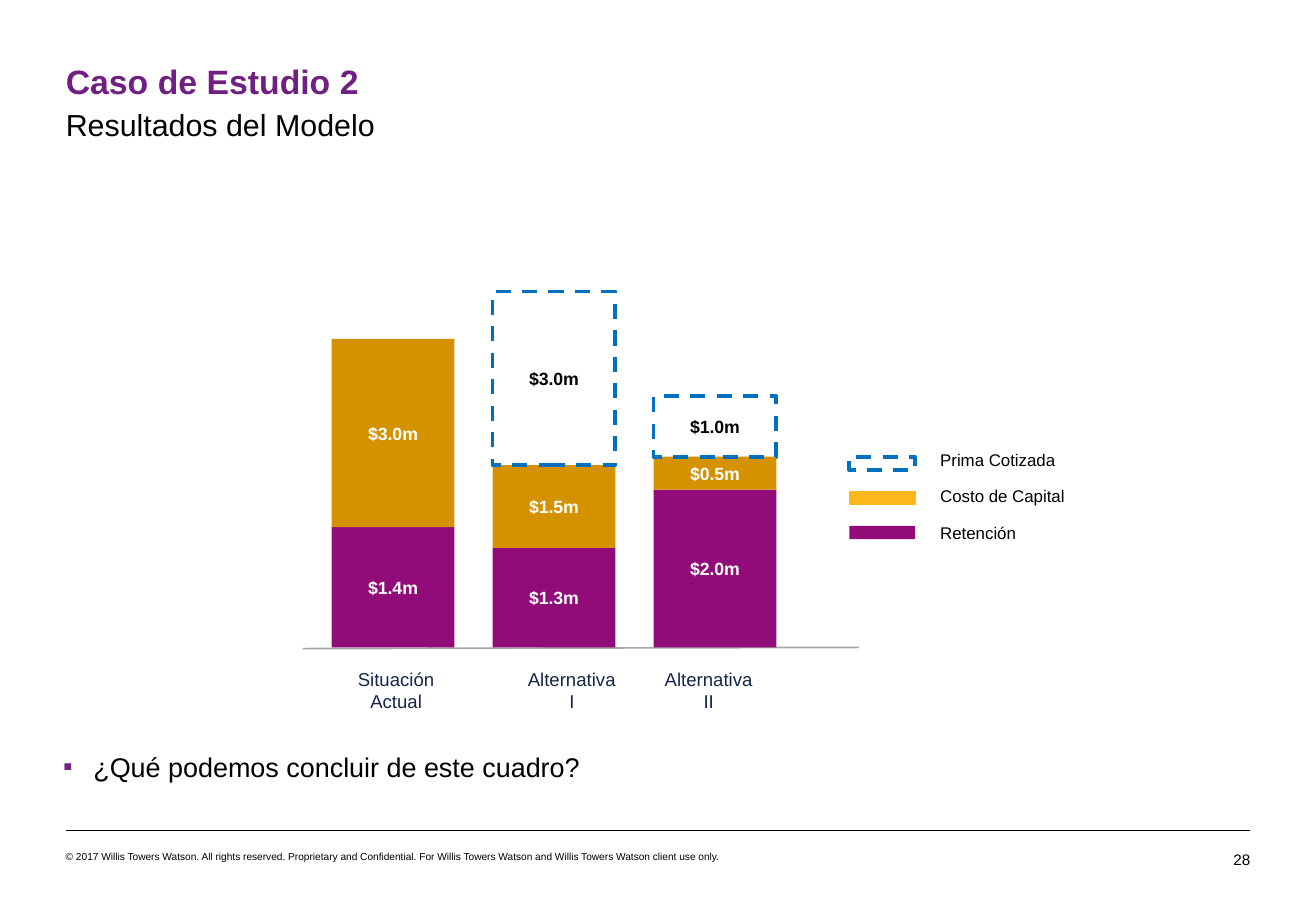
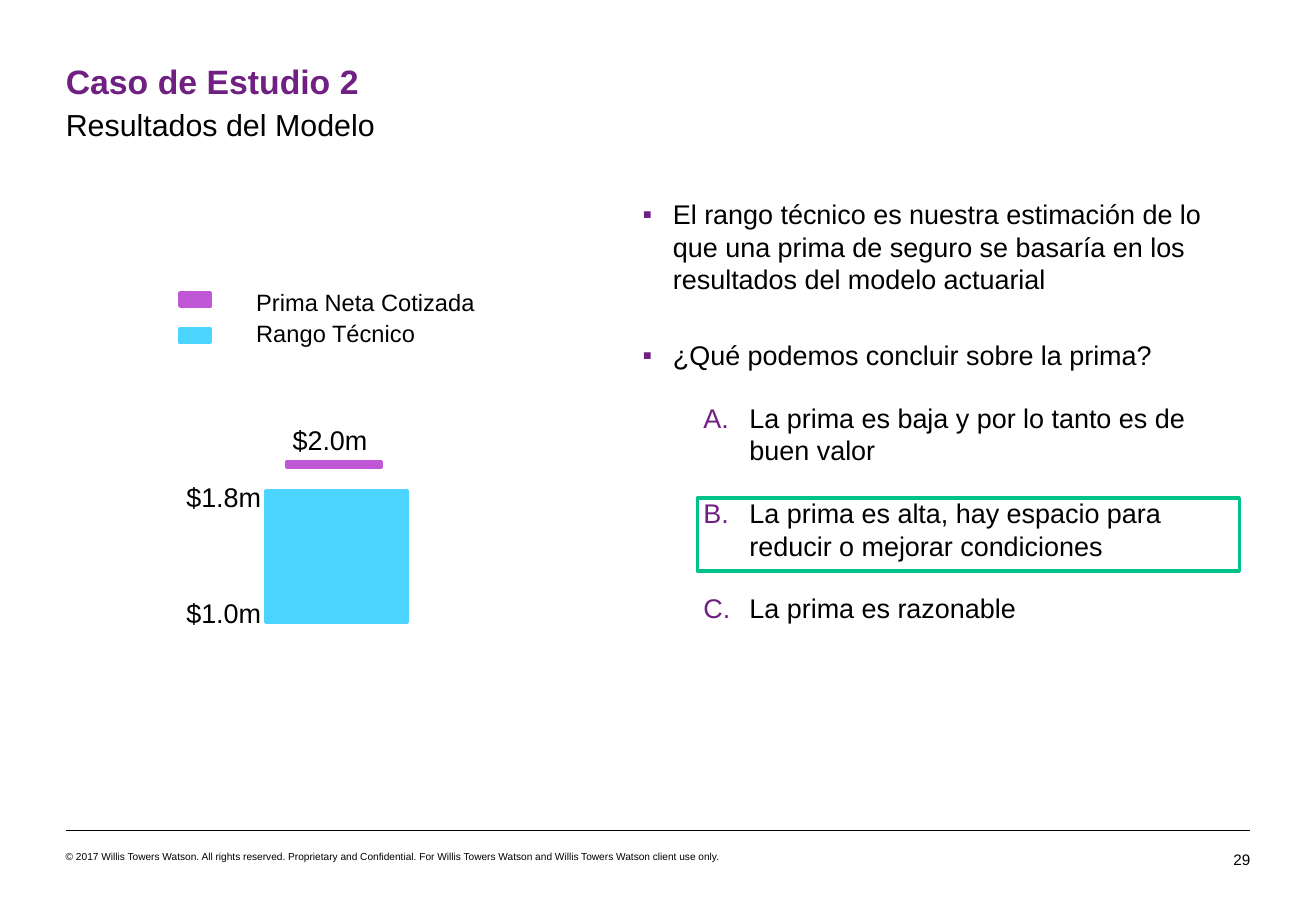
from lxml import etree
from pptx import Presentation
from pptx.dml.color import RGBColor
from pptx.enum.dml import MSO_LINE
from pptx.enum.shapes import MSO_CONNECTOR, MSO_SHAPE
from pptx.enum.text import MSO_ANCHOR, PP_ALIGN
from pptx.oxml.ns import qn
from pptx.util import Inches, Pt

RECT, LINE = MSO_SHAPE.RECTANGLE, MSO_CONNECTOR.STRAIGHT
LEFT, CENTER, RIGHT = PP_ALIGN.LEFT, PP_ALIGN.CENTER, PP_ALIGN.RIGHT
MIDDLE, DASH = MSO_ANCHOR.MIDDLE, MSO_LINE.DASH


class Theme:
    font = "Arial"
    title, subtitle, body, legend = 20, 18, 16, 14
    axis, value, key, page, legal = 11, 10.5, 10, 9, 6
    black, white, purple, navy = "000000", "FFFFFF", "702082", "132647"
    gold, amber, plum, blue, grey = "D49200", "FFB81C", "910C78", "0070C0", "A6A6A6"
    cyan, violet, green = "4BD4FF", "BF57D6", "00C389"


prs = Presentation()
prs.slide_width, prs.slide_height = Inches(10.83), Inches(7.5)
# Grid: 100 columns by 100 rows; every position and length counts cells
COL, ROW = prs.slide_width / 100, prs.slide_height / 100
MARGIN, CONTENT = 5, 90


def add_rect(s, x, y, w, h, fill=None, line=None, width=2, dash=None):
    sp = s.shapes.add_shape(RECT, int(x * COL), int(y * ROW), int(w * COL), int(h * ROW))
    sp.shadow.inherit = False
    if fill:
        sp.fill.solid()
        sp.fill.fore_color.rgb = RGBColor.from_string(fill)
    else:
        sp.fill.background()
    if line:
        sp.line.color.rgb = RGBColor.from_string(line)
        sp.line.width = Pt(width)
        sp.line.dash_style = dash
    else:
        sp.line.fill.background()
    return sp


def add_text(s, x, y, w, h, lines, size, color=Theme.black, bold=False,
             align=LEFT, inset=True):
    sp = s.shapes.add_textbox(int(x * COL), int(y * ROW), int(w * COL), int(h * ROW))
    tf = sp.text_frame
    tf.word_wrap = True
    if not inset:
        tf.margin_left = tf.margin_right = tf.margin_top = tf.margin_bottom = 0
    tf.text = "\n".join(lines)
    for p in tf.paragraphs:
        p.alignment = align
        p.font.name, p.font.size, p.font.bold = Theme.font, Pt(size), bold
        p.font.color.rgb = RGBColor.from_string(color)
    return tf


# Bullet levels: left indent, hanging indent, bullet tag and its attributes
LEVELS = {
    "point": (0.25, 0.25, "a:buChar", {"char": "▪"}),
    "answer": (0.88, 0.38, "a:buAutoNum", {"type": "alphaUcPeriod"}),
}
# Slides: page number, place of the bullets, (level, text, space after)
PAGES = [
    (28, (3.88, 81.73, CONTENT, 4.93), [
        ("point", "¿Qué podemos concluir de este cuadro?", 3.5)]),
    (29, (47.92, 21.07, 47.09, 55.73), [
        ("point", "El rango técnico es nuestra estimación de lo que una prima de seguro "
                  "se basaría en los resultados del modelo actuarial", 26),
        ("point", "¿Qué podemos concluir sobre la prima?", 18),
        ("answer", "La prima es baja y por lo tanto es de buen valor", 18),
        ("answer", "La prima es alta, hay espacio para reducir o mejorar condiciones", 18),
        ("answer", "La prima es razonable", 18)]),
]
LEGAL = ("© 2017 Willis Towers Watson. All rights reserved. Proprietary and Confidential. "
         "For Willis Towers Watson and Willis Towers Watson client use only.")
# Connectors: slide index, start, end, colour, width
RULES = [(i, (MARGIN, 91.1), (MARGIN + CONTENT, 91.1), Theme.black, 0.25) for i in (0, 1)]
RULES.append((0, (23, 71.2), (65.28, 71.07), Theme.grey, 1))

# Titles, footers and bullets
for number, place, items in PAGES:
    s = prs.slides.add_slide(prs.slide_layouts[6])
    add_text(s, MARGIN, 6.67, CONTENT, 4.53, ["Caso de Estudio 2"], Theme.title,
             Theme.purple, bold=True, inset=False)
    add_text(s, MARGIN, 11.65, CONTENT, 4, ["Resultados del Modelo"], Theme.subtitle,
             inset=False)
    add_text(s, MARGIN, 93.33, 57.7, 1.33, [LEGAL], Theme.legal, inset=False)
    add_text(s, 90.85, 93.33, 4.15, 2, [str(number)], Theme.page, align=RIGHT, inset=False)
    tf = add_text(s, *place, [text for _, text, _ in items], Theme.body)
    for p, (level, _, after) in zip(tf.paragraphs, items):
        indent, hanging, tag, attributes = LEVELS[level]
        pPr = p._p.get_or_add_pPr()
        pPr.set("marL", str(Inches(indent)))
        pPr.set("indent", str(-Inches(hanging)))
        bullet_color = etree.Element(qn("a:buClr"))
        etree.SubElement(bullet_color, qn("a:srgbClr"), val=Theme.purple)
        bullet_font = etree.Element(qn("a:buFont"), typeface=Theme.font)
        bullet = etree.Element(qn(tag), attributes)
        defaults = pPr.find(qn("a:defRPr"))
        for element in (bullet_color, bullet_font, bullet):
            defaults.addprevious(element)
        p.space_after = Pt(after)

# Footer rules and chart baseline
for index, (x1, y1), (x2, y2), color, width in RULES:
    c = prs.slides[index].shapes.add_connector(
        LINE, int(x1 * COL), int(y1 * ROW), int(x2 * COL), int(y2 * ROW))
    c.line.color.rgb = RGBColor.from_string(color)
    c.line.width = Pt(width)
    etree.SubElement(c._element.spPr, qn("a:effectLst"))

# Slide 28: stacked bars, built upwards from the baseline
s = prs.slides[0]
BASE, FIRST, PITCH, BAR = 71.07, 25.2, 12.23, 9.33
RETAINED = dict(fill=Theme.plum)
CAPITAL = dict(fill=Theme.gold)
QUOTED = dict(line=Theme.blue, width=2.25, dash=DASH)
# Bars: label lines, label centre, parts as (value, height, style)
BARS = [
    (["Situación", "Actual"], 30.1,
     [("$1.4m", 13.2, RETAINED), ("$3.0m", 20.67, CAPITAL)]),
    (["Alternativa", "I"], 43.45,
     [("$1.3m", 10.93, RETAINED), ("$1.5m", 9.07, CAPITAL), ("$3.0m", 19.07, QUOTED)]),
    (["Alternativa", "II"], 53.85,
     [("$2.0m", 17.33, RETAINED), ("$0.5m", 3.6, CAPITAL), ("$1.0m", 6.67, QUOTED)]),
]
for i, (label, center, parts) in enumerate(BARS):
    top = BASE
    for value, height, style in parts:
        top -= height
        sp = add_rect(s, FIRST + i * PITCH, top, BAR, height, **style)
        tf = sp.text_frame
        tf.text, tf.vertical_anchor = value, MIDDLE
        p = tf.paragraphs[0]
        p.alignment = CENTER
        p.font.name, p.font.size, p.font.bold = Theme.font, Pt(Theme.value), True
        p.font.color.rgb = RGBColor.from_string(
            Theme.black if style is QUOTED else Theme.white)
    add_text(s, center - 5, 72.67, 10, 6.6, label, Theme.axis, Theme.navy, align=CENTER)

# Slide 28: legend
KEYS = [("Prima Cotizada", QUOTED),
        ("Costo de Capital", dict(fill=Theme.amber, line=Theme.amber, width=0.75)),
        ("Retención", RETAINED)]
for i, (name, style) in enumerate(KEYS):
    add_rect(s, 64.54, 50.13 + i * 3.8, 5, 1.47, **style)
    add_text(s, 70.54, 48.67 + i * 4, 15, 3.6, [name], Theme.key)

# Slide 29: legend, range bar and quoted premium
s = prs.slides[1]
KEYS = [("Prima Neta Cotizada", Theme.violet), ("Rango Técnico", Theme.cyan)]
for i, (name, color) in enumerate(KEYS):
    add_rect(s, 13.67, 32.13 + i * 4, 2.31, 1.47, color, color)
    add_text(s, 18.56, 30.93 + i * 3.47, 22, 4.53, [name], Theme.legend)
add_rect(s, 20.22, 53.87, 10.71, 14.4, Theme.cyan, Theme.cyan)
add_rect(s, 21.79, 50.67, 7.2, 0.67, Theme.violet, Theme.violet)
for value, x, y in [("$2.0m", 21.33, 45.87), ("$1.8m", 13.25, 52.13), ("$1.0m", 13.25, 64.8)]:
    add_text(s, x, y, 9, 4.93, [value], Theme.body)

# Slide 29: frame around the chosen answer
add_rect(s, 53, 54.67, 41.18, 8, line=Theme.green)

prs.save("out.pptx")
